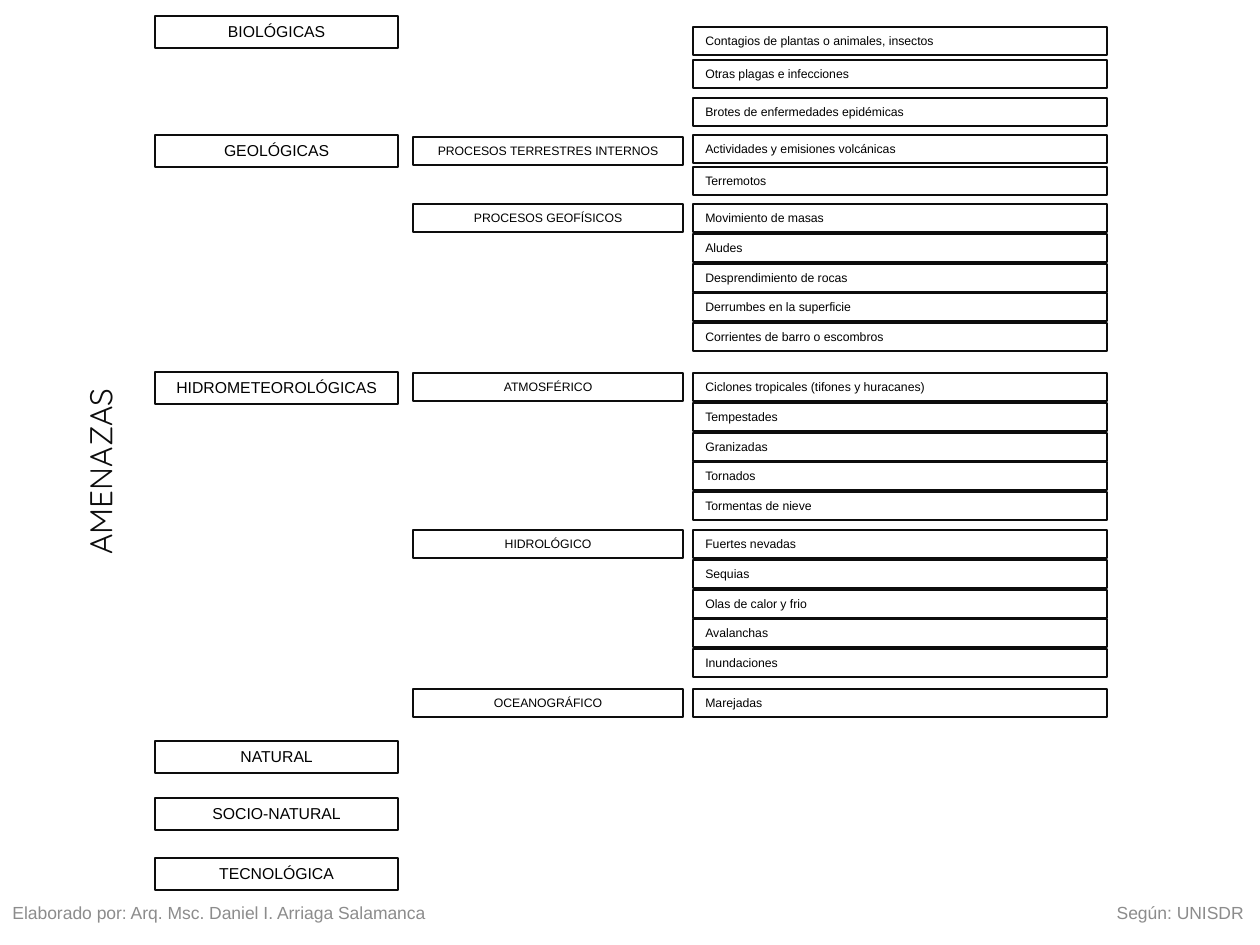
from collections import namedtuple
from dataclasses import dataclass

from pptx import Presentation
from pptx import util as u
from pptx.dml.color import RGBColor
from pptx.enum import shapes, text

PX = 914400 / 126  # EMU per px
Box = namedtuple("Box", "left top width height")
ALIGN = text.PP_ALIGN


@dataclass(frozen=True)
class Theme:
    body_font: str = "Arial"
    title_font: str = "Quicksand"
    ink: str = "000000"
    outline: str = "0D0D0D"
    muted: str = "8C8C8C"
    title_size: int = 18
    footer_size: int = 10
    category_size: int = 9
    detail_size: int = 7
    line_width: float = 0.75


THEME = Theme()

CATEGORY_TOPS = {
    "BIOLÓGICAS": 16,
    "GEOLÓGICAS": 135,
    "HIDROMETEOROLÓGICAS": 372,
    "NATURAL": 741,
    "SOCIO-NATURAL": 798,
    "TECNOLÓGICA": 858,
}
PROCESS_TOPS = {
    "PROCESOS TERRESTRES INTERNOS": 137,
    "PROCESOS GEOFÍSICOS": 204,
    "ATMOSFÉRICO": 373,
    "HIDROLÓGICO": 530,
    "OCEANOGRÁFICO": 689,
}
# Each group: first top, last top, hazards spread evenly between them
HAZARD_GROUPS = [
    (27, 60, ["Contagios de plantas o animales, insectos",
              "Otras plagas e infecciones"]),
    (98, 98, ["Brotes de enfermedades epidémicas"]),
    (135, 167, ["Actividades y emisiones volcánicas", "Terremotos"]),
    (204, 323, ["Movimiento de masas", "Aludes", "Desprendimiento de rocas",
                "Derrumbes en la superficie",
                "Corrientes de barro o escombros"]),
    (373, 492, ["Ciclones tropicales (tifones y huracanes)", "Tempestades",
                "Granizadas", "Tornados", "Tormentas de nieve"]),
    (530, 649, ["Fuertes nevadas", "Sequias", "Olas de calor y frio",
                "Avalanchas", "Inundaciones"]),
    (689, 689, ["Marejadas"]),
]


def emu(box):
    return [u.Emu(round(length * PX)) for length in box]


def set_all(target, values):
    for name, value in values.items():
        setattr(target, name, value)


def write(shape, words, size, align, color=THEME.ink, font=THEME.body_font):
    frame = shape.text_frame
    set_all(frame, {
        "text": words,
        "word_wrap": True,
        "auto_size": text.MSO_AUTO_SIZE.NONE,
        "vertical_anchor": text.MSO_ANCHOR.TOP,
    })
    paragraph = frame.paragraphs[0]
    paragraph.alignment = align
    run_font = paragraph.runs[0].font
    set_all(run_font, {"name": font, "size": u.Pt(size)})
    run_font.color.rgb = RGBColor.from_string(color)


def add_label(slide, box, words, size, align):
    label = slide.shapes.add_shape(shapes.MSO_SHAPE.RECTANGLE, *emu(box))
    label.shadow.inherit = False
    label.fill.background()
    label.line.color.rgb = RGBColor.from_string(THEME.outline)
    label.line.width = u.Pt(THEME.line_width)
    write(label, words, size, align)


def add_column(slide, column, tops, label_height, size, align):
    """Place one label per entry of tops, measured from the column's top."""
    for words, top in tops.items():
        box = Box(column.left, column.top + top, column.width, label_height)
        add_label(slide, box, words, size, align)


def hazard_tops():
    tops = {}
    for first, last, hazards in HAZARD_GROUPS:
        pitch = (last - first) / max(len(hazards) - 1, 1)
        for index, hazard in enumerate(hazards):
            tops[hazard] = first + round(index * pitch)
    return tops


def place_title(slide, box):
    title = slide.shapes.title
    set_all(title, dict(zip(("left", "top", "width", "height"), emu(box))))
    title.rotation = 270
    write(title, "AMENAZAS", THEME.title_size, ALIGN.CENTER,
          THEME.outline, THEME.title_font)


def add_footer(slide, box):
    half_width = 486
    credit = Box(box.left, box.top, half_width, box.height)
    origin = credit._replace(left=box.left + box.width - half_width)
    for part, words, align in (
        (credit, "Elaborado por: Arq. Msc. Daniel I. Arriaga Salamanca", ALIGN.LEFT),
        (origin, "Según: UNISDR", ALIGN.RIGHT),
    ):
        note = slide.shapes.add_textbox(*emu(part))
        write(note, words, THEME.footer_size, align, THEME.muted)


def main():
    deck = Presentation()
    deck.slide_width, deck.slide_height = emu((1260, 945))
    slide = deck.slides.add_slide(deck.slide_layouts[5])
    place_title(slide, Box(-144, 447, 486, 49))
    add_column(slide, Box(155, 0, 243, 945), CATEGORY_TOPS, 32,
               THEME.category_size, ALIGN.CENTER)
    add_column(slide, Box(413, 0, 270, 945), PROCESS_TOPS, 28,
               THEME.detail_size, ALIGN.CENTER)
    add_column(slide, Box(693, 0, 414, 945), hazard_tops(), 28,
               THEME.detail_size, ALIGN.LEFT)
    add_footer(slide, Box(0, 896, 1256, 49))
    deck.save("out.pptx")


if __name__ == "__main__":
    main()
